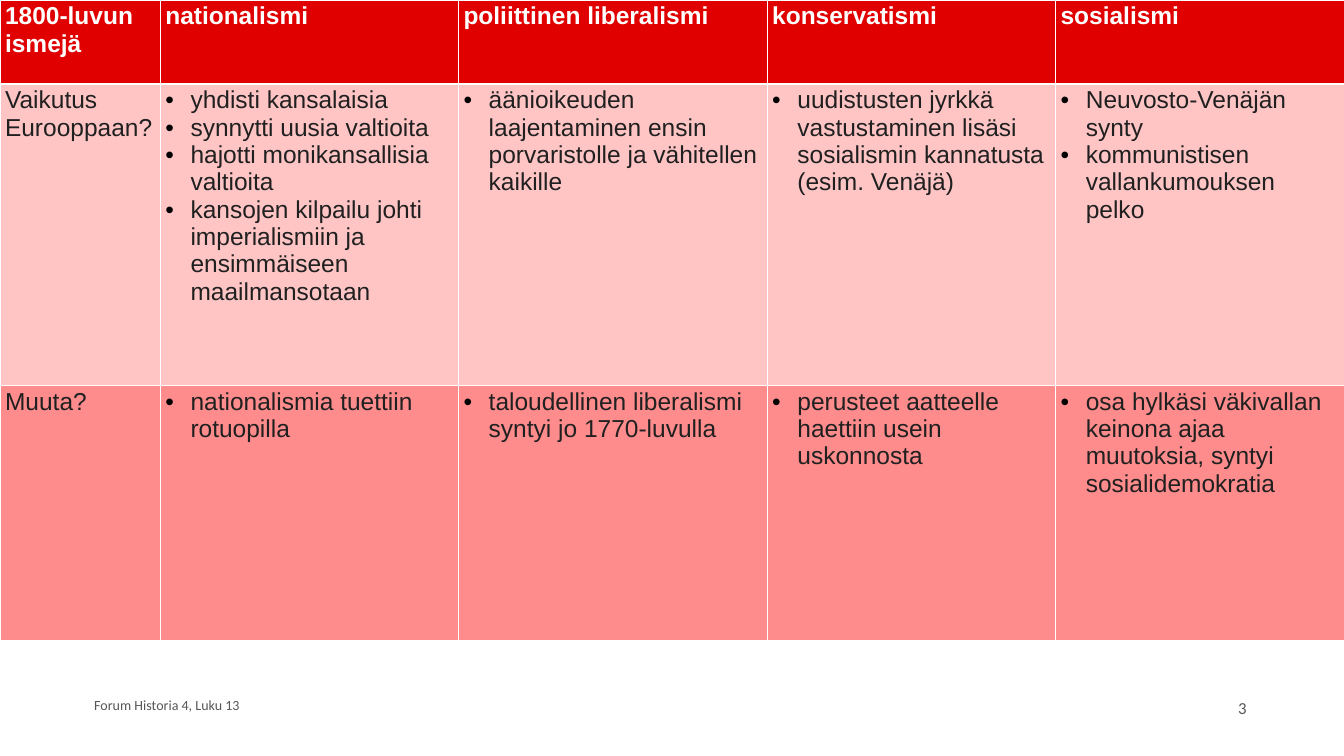
from dataclasses import dataclass
from typing import Optional

from lxml.etree import SubElement
from pptx import Presentation
from pptx.dml.color import RGBColor
from pptx.enum.text import MSO_ANCHOR as Anchor, PP_ALIGN as Align
from pptx.oxml import parse_xml
from pptx.oxml.ns import nsdecls, qn
from pptx.util import Pt

WHITE = RGBColor(0xFF, 0xFF, 0xFF)
BLACK = RGBColor(0, 0, 0)
INK = RGBColor(0x20, 0x20, 0x20)
GREY = RGBColor(0x57, 0x57, 0x57)
RED = RGBColor(0xE0, 0x00, 0x00)
PINK = RGBColor(0xFF, 0xC5, 0xC5)
ROSE = RGBColor(0xFF, 0x8C, 0x8C)

COLUMN_WIDTHS = (229, 426, 441, 412, 412)
INDENT = 36


@dataclass(frozen=True)
class Row:
    height: float
    fill: RGBColor
    label: str
    entries: tuple[tuple[str, ...], ...]
    header: bool = False


@dataclass(frozen=True)
class Footer:
    text: str
    left: float
    top: float
    width: float
    size: float
    align: Optional[Align] = None


ROWS = (
    Row(120, RED, "1800-luvun ismejä", (
        ("nationalismi",),
        ("poliittinen liberalismi",),
        ("konservatismi",),
        ("sosialismi",),
    ), header=True),
    Row(430.5, PINK, "Vaikutus Eurooppaan?", (
        ("yhdisti kansalaisia",
         "synnytti uusia valtioita",
         "hajotti monikansallisia valtioita",
         "kansojen kilpailu johti imperialismiin ja ensimmäiseen maailmansotaan"),
        ("äänioikeuden laajentaminen ensin porvaristolle ja vähitellen kaikille",),
        ("uudistusten jyrkkä vastustaminen lisäsi sosialismin kannatusta (esim. Venäjä)",),
        ("Neuvosto-Venäjän synty",
         "kommunistisen vallankumouksen pelko"),
    )),
    Row(364.5, ROSE, "Muuta?", (
        ("nationalismia tuettiin rotuopilla",),
        ("taloudellinen liberalismi syntyi jo 1770-luvulla",),
        ("perusteet aatteelle haettiin usein uskonnosta",),
        ("osa hylkäsi väkivallan keinona ajaa muutoksia, syntyi sosialidemokratia",),
    )),
)

FOOTERS = (
    Footer("3", 1356, 971.5, 432, 24, Align.RIGHT),
    Footer("Forum Historia 4, Luku 13", 127.5, 965, 648, 20),
)


def add_bullet(para) -> None:
    properties = para._p.get_or_add_pPr()
    properties.set("marL", str(Pt(INDENT)))
    properties.set("indent", str(-Pt(INDENT)))
    color = SubElement(properties, qn("a:buClr"))
    SubElement(color, qn("a:srgbClr"), val=str(BLACK))
    SubElement(properties, qn("a:buFont"), typeface="Arial")
    SubElement(properties, qn("a:buChar"), char="•")


def write(para, text: str, *, font: str, size: float, color: RGBColor,
          bold: bool = False, bullet: bool = False,
          align: Optional[Align] = None) -> None:
    if bullet:
        add_bullet(para)
    if align is not None:
        para.alignment = align
    span = para.add_run()
    span.text = text
    span.font.name = font
    span.font.size = Pt(size)
    span.font.bold = bold
    span.font.color.rgb = color


def add_borders(cell, bottom: float) -> None:
    properties = cell._tc.get_or_add_tcPr()
    widths = {"lnL": 1, "lnR": 1, "lnT": 1, "lnB": bottom}
    for position, (side, width) in enumerate(widths.items()):
        properties.insert(position, parse_xml(
            f'<a:{side} {nsdecls("a")} w="{Pt(width)}"><a:solidFill>'
            f'<a:srgbClr val="{WHITE}"/></a:solidFill></a:{side}>'))


def fill_cell(cell, row: Row, lines: tuple[str, ...], bullet: bool) -> None:
    cell.fill.solid()
    cell.fill.fore_color.rgb = row.fill
    add_borders(cell, 3 if row.header else 1)
    frame = cell.text_frame
    for number, line in enumerate(lines):
        para = frame.add_paragraph() if number else frame.paragraphs[0]
        write(para, line, font="Arial", size=35, bold=row.header,
              color=WHITE if row.header else INK, bullet=bullet)


def add_isms_table(page) -> None:
    table = page.shapes.add_table(
        len(ROWS), len(COLUMN_WIDTHS), 0, 0,
        Pt(sum(COLUMN_WIDTHS)), Pt(sum(row.height for row in ROWS))).table
    for column, width in zip(table.columns, COLUMN_WIDTHS):
        column.width = Pt(width)
    for table_row, row in zip(table.rows, ROWS):
        table_row.height = Pt(row.height)
        for number, lines in enumerate(((row.label,), *row.entries)):
            fill_cell(table_row.cells[number], row, lines,
                      bullet=number > 0 and not row.header)


def add_footer(page, footer: Footer) -> None:
    box = page.shapes.add_textbox(
        Pt(footer.left), Pt(footer.top), Pt(footer.width), Pt(57.5))
    frame = box.text_frame
    frame.word_wrap = True
    frame.vertical_anchor = Anchor.BOTTOM
    write(frame.paragraphs[0], footer.text, font="Calibri", size=footer.size,
          color=GREY, align=footer.align)


def main() -> None:
    deck = Presentation()
    deck.slide_width = Pt(1920)
    deck.slide_height = Pt(1080)
    page = deck.slides.add_slide(deck.slide_layouts[6])
    add_isms_table(page)
    for footer in FOOTERS:
        add_footer(page, footer)
    deck.save("out.pptx")


if __name__ == "__main__":
    main()
